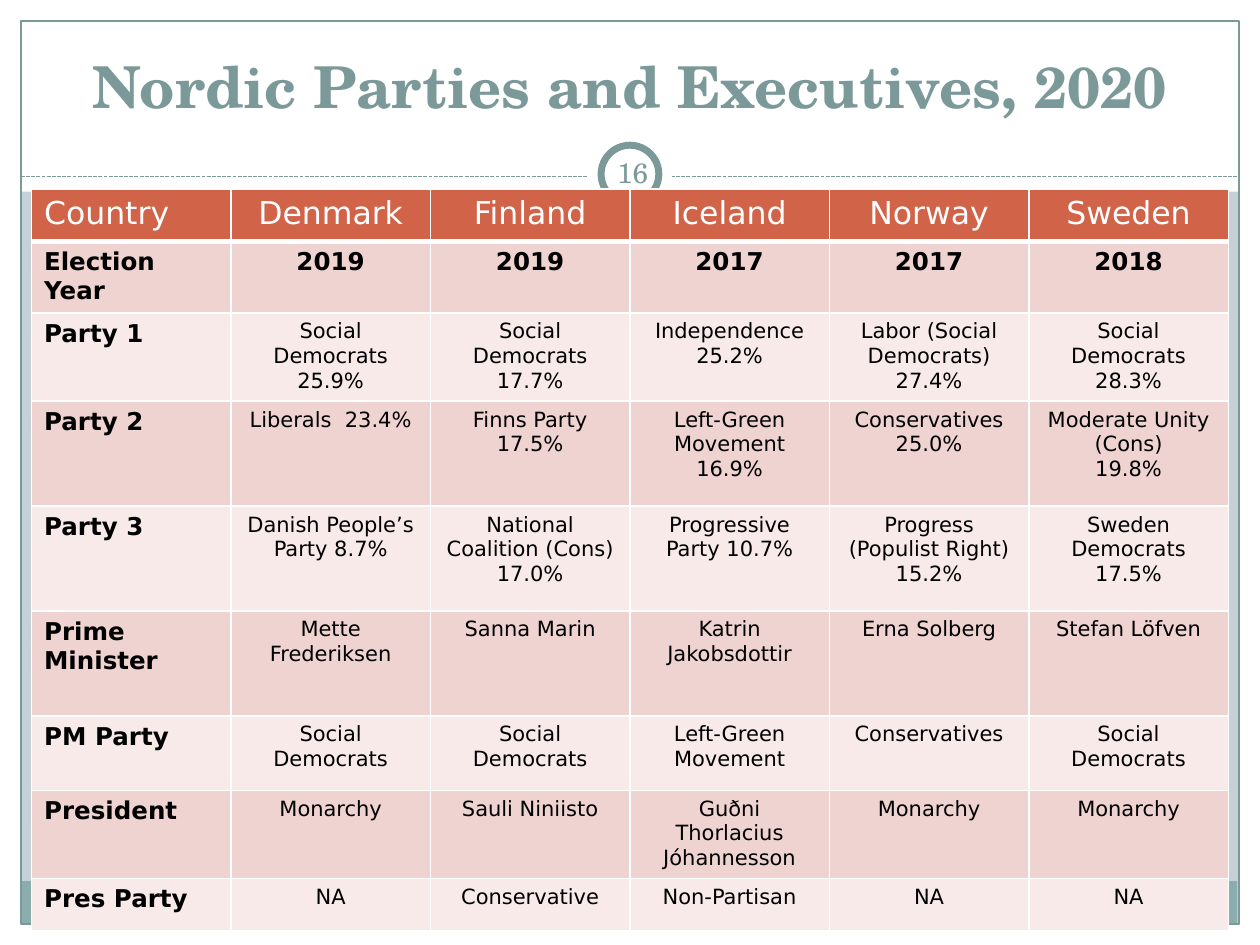
"""Build the slide of Nordic parties and executives, 2020."""
from dataclasses import dataclass
from lxml import etree
from pptx import Presentation
from pptx.dml.color import RGBColor
from pptx.enum.dml import MSO_LINE
from pptx.enum.shapes import MSO_CONNECTOR, MSO_SHAPE
from pptx.enum.text import MSO_ANCHOR, PP_ALIGN
from pptx.oxml.ns import qn
from pptx.util import Pt

RECT, OVAL = MSO_SHAPE.RECTANGLE, MSO_SHAPE.OVAL
STRAIGHT, DASH = MSO_CONNECTOR.STRAIGHT, MSO_LINE.SQUARE_DOT
LEFT, CENTER = PP_ALIGN.LEFT, PP_ALIGN.CENTER
BOTTOM, MIDDLE = MSO_ANCHOR.BOTTOM, MSO_ANCHOR.MIDDLE


@dataclass(frozen=True)
class Theme:
    """Colours, fonts and type sizes."""
    back: str = "C5D1D7"
    white: str = "FFFFFF"
    black: str = "000000"
    teal: str = "7C999A"
    strip: str = "8CADAE"
    header: str = "D16349"
    bands: tuple = ("F7EAE9", "EED3D0")
    serif: str = "TeX Gyre Schola"
    sans: str = "DejaVu Sans"
    title: int = 33
    head: int = 18
    label: int = 14
    body: int = 12
    page: int = 16


THEME = Theme()
WIDTH, HEIGHT, EDGE = 720, 540, 12
TITLE = "Nordic Parties and Executives, 2020"
PAGE = "16"
ROWS = [
    (30, ["Country", "Denmark", "Finland", "Iceland", "Norway", "Sweden"]),
    (30, ["Election Year", "2019", "2019", "2017", "2017", "2018"]),
    (49, ["Party 1", "Social Democrats 25.9%", "Social Democrats 17.7%",
          "Independence\n25.2%", "Labor (Social Democrats)\n27.4%",
          "Social Democrats\n28.3%"]),
    (60, ["Party 2", "Liberals  23.4%", "Finns Party 17.5%",
          "Left-Green Movement 16.9%", "Conservatives\n25.0%",
          "Moderate Unity (Cons)\n19.8%"]),
    (60, ["Party 3", "Danish People’s Party 8.7%",
          "National Coalition (Cons) 17.0%", "Progressive Party 10.7%",
          "Progress (Populist Right)\n15.2%", "Sweden Democrats 17.5%"]),
    (60, ["Prime Minister", "Mette Frederiksen", "Sanna Marin",
          "Katrin Jakobsdottir", "Erna Solberg", "Stefan Löfven"]),
    (42.5, ["PM Party", "Social Democrats", "Social Democrats",
            "Left-Green Movement", "Conservatives", "Social Democrats"]),
    (42.5, ["President", "Monarchy", "Sauli Niniisto",
            "Guðni Thorlacius Jóhannesson", "Monarchy", "Monarchy"]),
    (30, ["Pres Party", "NA", "Conservative", "Non-Partisan", "NA", "NA"]),
]
SHAPES = [
    (RECT, (0, HEIGHT - EDGE, WIDTH, EDGE), THEME.white, 0),
    (RECT, (0, 0, WIDTH, 109.5), THEME.white, 0),
    (RECT, (0, 0, EDGE, HEIGHT), THEME.white, 0),
    (RECT, (WIDTH - EDGE, 0, EDGE, HEIGHT), THEME.white, 0),
    (RECT, (11.5, 503.5, 695.5, 24.5), THEME.strip, 0),
    (RECT, (EDGE, EDGE, WIDTH - 2 * EDGE, HEIGHT - 2 * EDGE), None, 0.75),
]
RINGS = [
    (OVAL, (336, 76, 48, 48), THEME.white, 0),
    (OVAL, (343.5, 83, 33, 33), THEME.white, 4),
]


def color(code):
    return RGBColor.from_string(code)


def paint(fill, code):
    fill.solid()
    fill.fore_color.rgb = color(code)


def draw(slide, kind, box, fill, width):
    shape = slide.shapes.add_shape(kind, *map(Pt, box))
    shape.shadow.inherit = False
    if fill:
        paint(shape.fill, fill)
    else:
        shape.fill.background()
    if width:
        shape.line.color.rgb = color(THEME.teal)
        shape.line.width = Pt(width)
    else:
        shape.line.fill.background()


def rule(slide, top):
    line = slide.shapes.add_connector(
        STRAIGHT, Pt(EDGE), Pt(top), Pt(WIDTH - EDGE), Pt(top))
    line.line.color.rgb = color(THEME.teal)
    line.line.width = Pt(0.75)
    line.line.dash_style = DASH
    etree.SubElement(line._element.spPr, qn("a:effectLst"))


def write(frame, text, size, font, code, bold=False, align=CENTER):
    frame.text = text
    for para in frame.paragraphs:
        para.alignment = align
        for run in para.runs:
            run.font.size, run.font.name, run.font.bold = Pt(size), font, bold
            run.font.color.rgb = color(code)


def label(slide, box, text, size, anchor, bold=False, inset=7.2):
    frame = slide.shapes.add_textbox(*map(Pt, box)).text_frame
    frame.word_wrap = True
    frame.vertical_anchor = anchor
    frame.margin_left = frame.margin_right = Pt(inset)
    write(frame, text, size, THEME.serif, THEME.teal, bold)


def border(cell, base):
    props = cell._tc.get_or_add_tcPr()
    for side, width in zip("LRTB", (1, 1, 1, base)):
        line = etree.SubElement(props, qn(f"a:ln{side}"), w=str(Pt(width)))
        fill = etree.SubElement(line, qn("a:solidFill"))
        etree.SubElement(fill, qn("a:srgbClr"), val=THEME.white)


def grid(slide, left, top, width):
    count = len(ROWS[0][1])
    total = sum(height for height, _ in ROWS)
    table = slide.shapes.add_table(
        len(ROWS), count, Pt(left), Pt(top), Pt(width), Pt(total)).table
    for column in table.columns:
        column.width = Pt(width / count)
    for i, (height, texts) in enumerate(ROWS):
        table.rows[i].height = Pt(height)
        for j, text in enumerate(texts):
            cell = table.cell(i, j)
            bold = i == 1 or (i > 1 and j == 0)
            size = THEME.label if bold else THEME.body if i else THEME.head
            ink = THEME.black if i else THEME.white
            border(cell, 1 if i else 3)
            paint(cell.fill, THEME.bands[i % 2] if i else THEME.header)
            write(cell.text_frame, text, size, THEME.sans, ink, bold,
                  CENTER if j else LEFT)


def main():
    deck = Presentation()
    deck.slide_width, deck.slide_height = Pt(WIDTH), Pt(HEIGHT)
    slide = deck.slides.add_slide(deck.slide_layouts[6])
    paint(slide.background.fill, THEME.back)
    for item in SHAPES:
        draw(slide, *item)
    rule(slide, 101)
    for item in RINGS:
        draw(slide, *item)
    label(slide, (18, 12, 684, 60), TITLE, THEME.title, BOTTOM, True)
    grid(slide, 18, 108, 684)
    label(slide, (343.5, 81, 36, 34.5), PAGE, THEME.page, MIDDLE, inset=3.6)
    deck.save("out.pptx")


if __name__ == "__main__":
    main()
